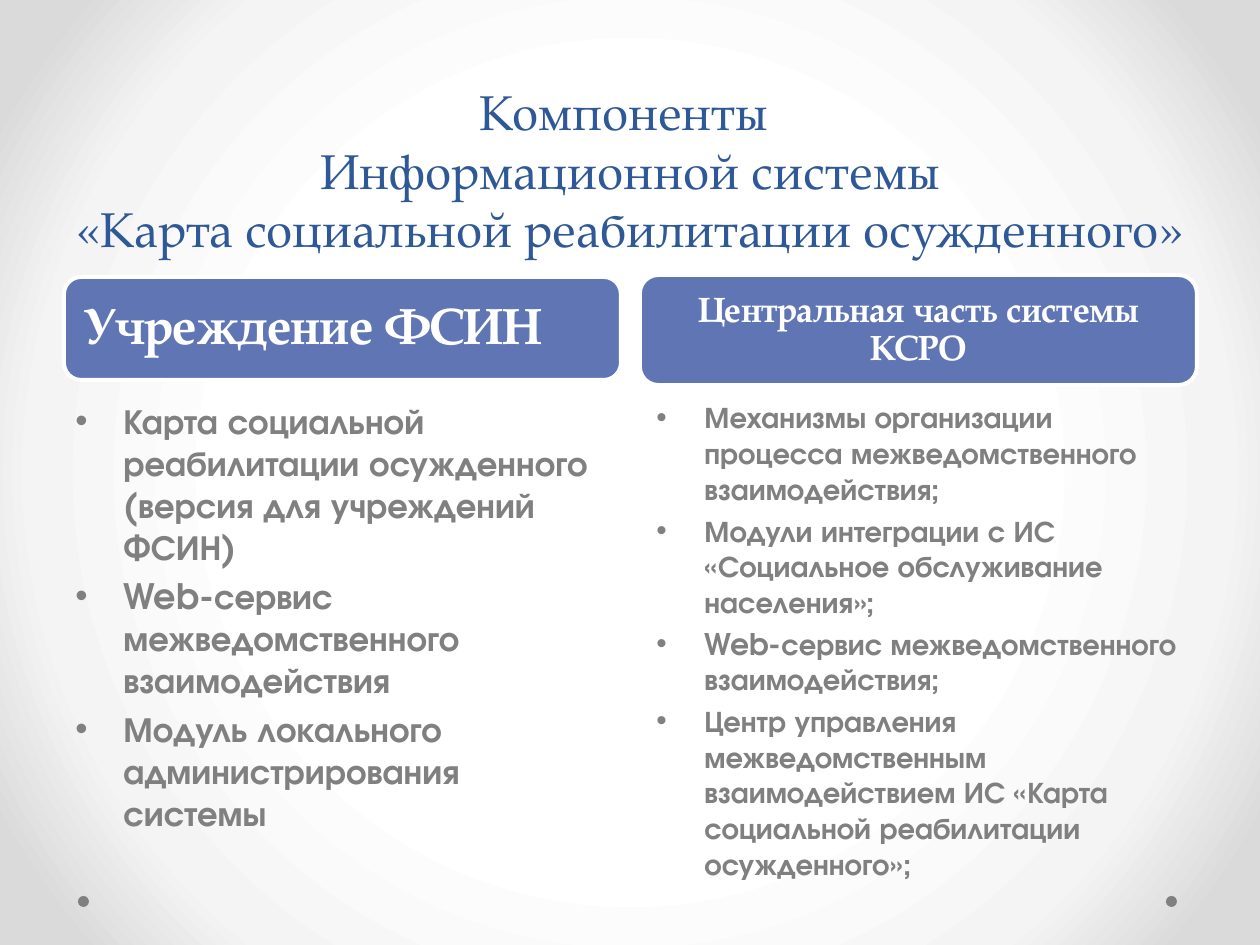
"""Build the slide on the parts of the social rehabilitation card system."""
from lxml.etree import SubElement
from pptx import Presentation
from pptx.dml.color import RGBColor
from pptx.enum.shapes import MSO_SHAPE as Shape
from pptx.enum.text import MSO_ANCHOR as Anchor, MSO_AUTO_SIZE as Fit, PP_ALIGN as Align
from pptx.oxml import parse_xml
from pptx.oxml.ns import nsdecls, qn
from pptx.util import Pt

PX = 914400 // 126
HUES = {"title": "2F5897", "head": "6076B4", "white": "FFFFFF", "text": "808080"}
SHADES = [(50, "FFFFFF"), (76, "F4F4F4"), (92, "DADADA")]
SERIF, SANS = "TeX Gyre Pagella", "TeX Gyre Adventor"
TITLE = "Компоненты \vИнформационной системы\v«Карта социальной реабилитации осужденного»"
COLS = [
    {"head": "Учреждение ФСИН", "box": (64, 277, 557, 103), "pad": 15,
     "size": 29, "align": Align.LEFT, "body": (63, 393, 557, 451), "pts": 20,
     "items": ["Карта социальной реабилитации осужденного (версия для учреждений ФСИН)",
               "Web-сервис межведомственного взаимодействия",
               "Модуль локального администрирования системы"]},
    {"head": "Центральная часть системы КСРО", "box": (640, 275, 557, 110), "pad": 10,
     "size": 20, "align": Align.CENTER, "body": (644, 393, 557, 451), "pts": 17,
     "items": ["Механизмы организации процесса межведомственного взаимодействия;",
               "Модули интеграции с ИС «Социальное обслуживание населения»;",
               "Web-сервис межведомственного взаимодействия;",
               "Центр управления межведомственным взаимодействием ИС "
               "«Карта социальной реабилитации осужденного»;"]},
]
DOTS = [(78, 896, 11, 11), (1166, 896, 11, 11)]
INDENT = 48


def emu(box):
    return [n * PX for n in box]


def hue(name):
    return RGBColor.from_string(HUES[name])


def style(para, face, size, color, bold=False):
    font = para.font
    font.name, font.size, font.bold = face, Pt(size), bold
    font.color.rgb = hue(color)


def paint(slide):
    fill = slide.background.fill
    fill.gradient()
    old = slide.element.find(".//" + qn("a:gradFill"))
    stops = "".join(f'<a:gs pos="{pos * 1000}"><a:srgbClr val="{tone}"/></a:gs>'
                    for pos, tone in SHADES)
    new = parse_xml(
        f'<a:gradFill {nsdecls("a")} rotWithShape="1"><a:gsLst>{stops}</a:gsLst>'
        '<a:path path="circle"><a:fillToRect l="50000" t="50000" r="50000" b="50000"/>'
        '</a:path></a:gradFill>')
    old.getparent().replace(old, new)


def add_shape(slide, kind, box, color):
    shape = slide.shapes.add_shape(kind, *emu(box))
    shape.shadow.inherit = False
    shape.fill.solid()
    shape.fill.fore_color.rgb = hue(color)
    shape.line.fill.background()
    return shape


def add_head(slide, col):
    shape = add_shape(slide, Shape.ROUNDED_RECTANGLE, col["box"], "head")
    shape.line.color.rgb = hue("white")
    shape.line.width = Pt(2.25)
    frame = shape.text_frame
    frame.word_wrap = True
    frame.vertical_anchor = Anchor.MIDDLE
    frame.margin_left = frame.margin_right = col["pad"] * PX
    frame.margin_top = frame.margin_bottom = col["pad"] * PX
    para = frame.paragraphs[0]
    para.text, para.alignment, para.line_spacing = col["head"], col["align"], 0.9
    style(para, SERIF, col["size"], "white", True)


def add_list(slide, col):
    frame = slide.shapes.add_textbox(*emu(col["body"])).text_frame
    frame.word_wrap = True
    for i, item in enumerate(col["items"]):
        para = frame.add_paragraph() if i else frame.paragraphs[0]
        para.text = item
        props = para._p.get_or_add_pPr()
        props.set("marL", str(INDENT * PX))
        props.set("indent", str(-INDENT * PX))
        SubElement(props, qn("a:buFont"), typeface="Arial")
        SubElement(props, qn("a:buChar"), char="•")
        para.space_before = Pt(col["pts"] * 0.2)
        style(para, SANS, col["pts"], "text", True)


def main():
    deck = Presentation()
    deck.slide_width, deck.slide_height = emu((1260, 945))
    slide = deck.slides.add_slide(deck.slide_layouts[5])
    paint(slide)
    title = slide.shapes.title
    title.left, title.top, title.width, title.height = emu((63, 16, 1134, 248))
    frame = title.text_frame
    frame.text = TITLE
    frame.word_wrap, frame.auto_size = True, Fit.NONE
    frame.vertical_anchor = Anchor.BOTTOM
    para = frame.paragraphs[0]
    para.alignment = Align.CENTER
    style(para, SERIF, 28, "title")
    for dot in DOTS:
        add_shape(slide, Shape.OVAL, dot, "text")
    for col in COLS:
        add_head(slide, col)
        add_list(slide, col)
    deck.save("out.pptx")


if __name__ == "__main__":
    main()
